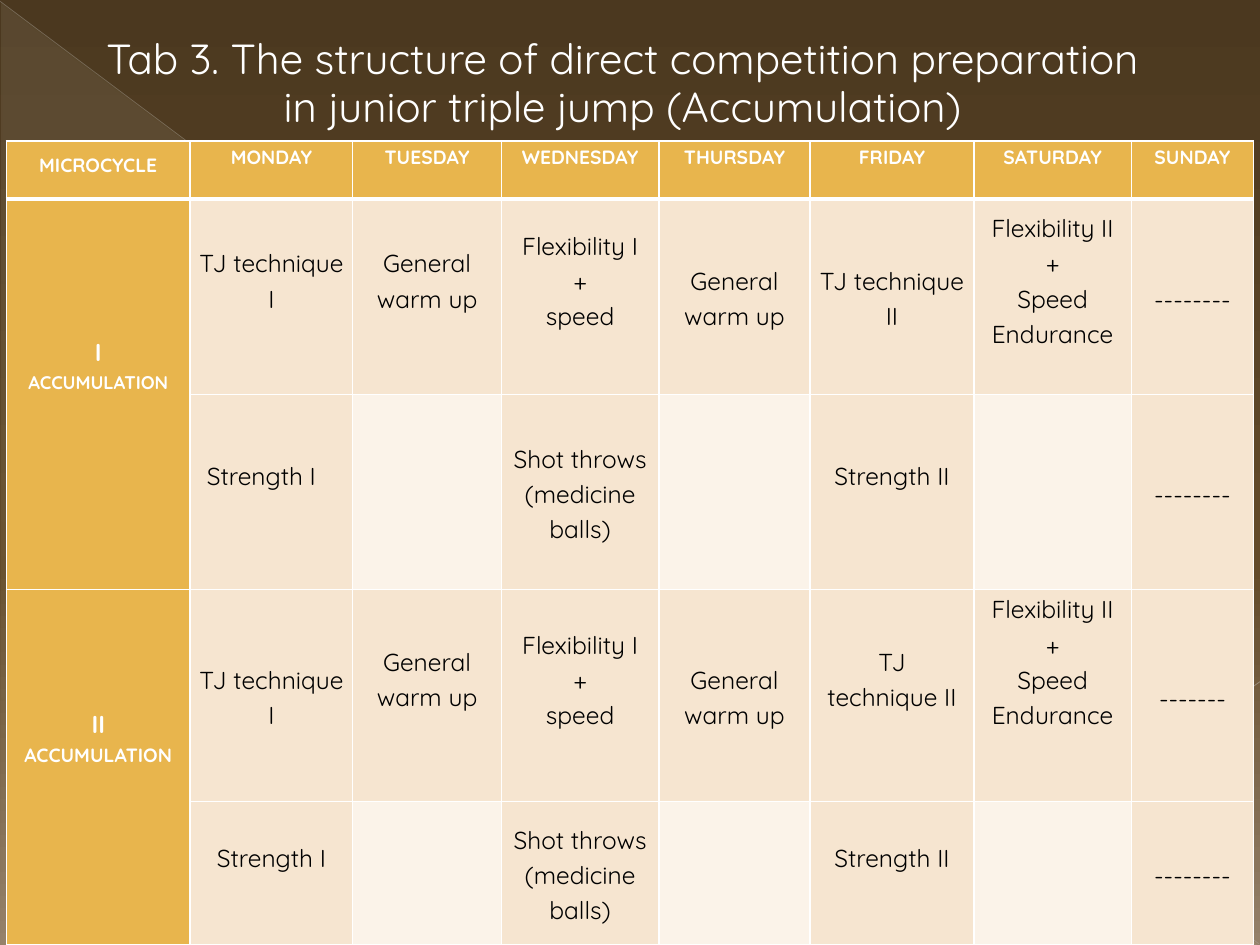
from dataclasses import dataclass

from lxml.etree import SubElement
from pptx import Presentation
from pptx.dml.color import RGBColor
from pptx.enum.shapes import MSO_CONNECTOR, MSO_SHAPE
from pptx.enum.text import MSO_ANCHOR, MSO_AUTO_SIZE, PP_ALIGN
from pptx.oxml import parse_xml
from pptx.oxml.ns import nsdecls, qn
from pptx.util import Inches, Pt


@dataclass(frozen=True)
class Theme:
    font: str = "Quicksand"
    white: str = "FFFFFF"
    black: str = "000000"
    gold: str = "E8B54D"
    cream: str = "F6E5D0"
    pale: str = "FBF3E9"
    backdrop: tuple = ((0, "4B381F", 100), (60, "634B2A", 100), (100, "948069", 100))
    sheen: tuple = ((0, "ECEDD1", 10), (70, "ECEDD1", 8), (100, "ECEDD1", 1))
    title_size: float = 24
    body_size: float = 14
    head_size: float = 11
    line_spacing: float = 1.15


THEME = Theme()
WIDTH, HEIGHT = 10, 7.5
TITLE_BOX = (0, 0.21, 9.88, 0.91)
TABLE_BOX = (0.05, 1.12, 9.88, 6.38)
COLUMNS = (1.46, 1.29, 1.18, 1.25, 1.2, 1.3, 1.25, 0.97)
ROWS = (0.46, 1.55, 1.55, 1.68, 1.14)
SIDE_INSET = 0.07
BODY_LINE = 0.28  # height of one line of body text

TITLE = ("Tab 3. The structure of direct competition preparation"
         "\vin junior triple jump (Accumulation)")
HEADINGS = ("MICROCYCLE", "MONDAY", "TUESDAY", "WEDNESDAY", "THURSDAY",
            "FRIDAY", "SATURDAY", "SUNDAY")
# first row, numeral, size of the word below it
MICROCYCLES = ((1, "I", 10.5), (3, "II", 11))
JUMP = "TJ technique I"
WARM_UP = "General warm up"
SPEED = "Flexibility I\n+\nspeed"
ENDURANCE = "Flexibility II\n+\nSpeed Endurance"
THROWS = "Shot throws (medicine balls)"
REST = "--------"
# each session: text, lines of space kept free below it
SESSIONS = (
    ((JUMP, 1), (WARM_UP, 1), (SPEED, 1), (WARM_UP, 0),
     ("TJ technique II", 0), (ENDURANCE, 1), (REST, 0)),
    (("Strength I", 1), None, (THROWS, 0), None, ("Strength II", 1), None, (REST, 0)),
    ((JUMP, 0), (WARM_UP, 1), (SPEED, 1), (WARM_UP, 0),
     ("TJ\ntechnique II", 1), (ENDURANCE, 2), ("-------", 0)),
    (("Strength I", 1), None, (THROWS, 0), None, ("Strength II", 1), None, (REST, 0)),
)


def color(value):
    return RGBColor.from_string(value)


def gradient(stops, angle):
    """Gradient fill from (position %, colour, opacity %) stops."""
    marks = "".join(
        f'<a:gs pos="{position * 1000}"><a:srgbClr val="{value}">'
        f'<a:alpha val="{opacity * 1000}"/></a:srgbClr></a:gs>'
        for position, value, opacity in stops)
    return parse_xml(f'<a:gradFill {nsdecls("a")} rotWithShape="1"><a:gsLst>{marks}</a:gsLst>'
                     f'<a:lin ang="{angle * 60000}" scaled="0"/></a:gradFill>')


def replace_solid(properties, fill):
    solid = properties.find(qn("a:solidFill"))
    properties.replace(solid, fill)


def add_hairline(slide, start, end, value, width, opacity):
    line = slide.shapes.add_connector(
        MSO_CONNECTOR.STRAIGHT, *(Inches(length) for length in (*start, *end)))
    line.line.color.rgb = color(value)
    line.line.width = Pt(width)
    tint = line.line._ln.find(qn("a:solidFill"))[0]
    SubElement(tint, qn("a:alpha")).set("val", str(opacity * 1000))
    SubElement(line._element.spPr, qn("a:effectLst"))


def add_backdrop(slide, width, height):
    slide.background.fill.solid()
    replace_solid(slide.background._cSld.bg.bgPr, gradient(THEME.backdrop, 90))
    triangle = slide.shapes.add_shape(
        MSO_SHAPE.RIGHT_TRIANGLE, Inches(0.01), Inches(0.02),
        Inches(width - 0.02), Inches(height - 0.02))
    triangle.shadow.inherit = False
    triangle.line.fill.background()
    triangle.fill.solid()
    replace_solid(triangle._element.spPr, gradient(THEME.sheen, 133))
    add_hairline(slide, (0, 0.01), (width - 0.01, height - 0.01), "BEBAB5", 0.39, 35)
    add_hairline(slide, (width, 5.41), (7.07, height - 0.01), "C5C2BE", 0.47, 45)


def format_paragraph(paragraph, size, value, bold=False, spacing=THEME.line_spacing):
    paragraph.alignment = PP_ALIGN.CENTER
    paragraph.line_spacing = spacing
    font = paragraph.font
    font.name, font.size, font.bold = THEME.font, Pt(size), bold
    font.color.rgb = color(value)


def place_title(slide, box):
    title = slide.shapes.title
    title.left, title.top, title.width, title.height = map(Inches, box)
    frame = title.text_frame
    frame.text = TITLE
    frame.word_wrap = True
    frame.auto_size = MSO_AUTO_SIZE.NONE
    frame.vertical_anchor = MSO_ANCHOR.MIDDLE
    format_paragraph(frame.paragraphs[0], THEME.title_size, THEME.white, spacing=0.95)


def format_cell(cell, fill, bottom_width=1):
    cell.fill.solid()
    cell.fill.fore_color.rgb = color(fill)
    cell.margin_left = cell.margin_right = Inches(SIDE_INSET)
    cell.margin_top = cell.margin_bottom = 0
    cell.vertical_anchor = MSO_ANCHOR.MIDDLE
    properties = cell._tc.get_or_add_tcPr()
    widths = {"lnL": 1, "lnR": 1, "lnT": 1, "lnB": bottom_width}
    for index, (side, width) in enumerate(widths.items()):
        properties.insert(index, parse_xml(
            f'<a:{side} {nsdecls("a")} w="{Pt(width)}"><a:solidFill>'
            f'<a:srgbClr val="{THEME.white}"/></a:solidFill></a:{side}>'))


def fill_headings(table):
    for column, heading in enumerate(HEADINGS):
        cell = table.cell(0, column)
        format_cell(cell, THEME.gold, bottom_width=3)
        cell.vertical_anchor = MSO_ANCHOR.TOP
        cell.text = heading
        format_paragraph(cell.text_frame.paragraphs[0], THEME.head_size, THEME.white, True,
                         THEME.line_spacing if column else 1.5)


def fill_microcycles(table):
    for row, numeral, word_size in MICROCYCLES:
        for part in (row, row + 1):
            format_cell(table.cell(part, 0), THEME.gold)
        cell = table.cell(row, 0)
        cell.merge(table.cell(row + 1, 0))
        cell.margin_bottom = Inches(0.5)
        cell.text = f"{numeral}\nACCUMULATION"
        for paragraph, size in zip(cell.text_frame.paragraphs, (THEME.body_size, word_size)):
            format_paragraph(paragraph, size, THEME.white, True)


def fill_sessions(table):
    for row, sessions in enumerate(SESSIONS, start=1):
        for column, session in enumerate(sessions, start=1):
            cell = table.cell(row, column)
            format_cell(cell, THEME.cream if session else THEME.pale)
            if not session:
                continue
            cell.text, free_lines = session
            cell.margin_bottom = Inches(free_lines * BODY_LINE)
            for paragraph in cell.text_frame.paragraphs:
                format_paragraph(paragraph, THEME.body_size, THEME.black)
    table.cell(2, 1).margin_right = Inches(SIDE_INSET + 0.16)


def add_schedule(slide, box):
    table = slide.shapes.add_table(len(ROWS), len(COLUMNS), *map(Inches, box)).table
    table.horz_banding = False
    for column, width in zip(table.columns, COLUMNS):
        column.width = Inches(width)
    for row, height in zip(table.rows, ROWS):
        row.height = Inches(height)
    fill_headings(table)
    fill_microcycles(table)
    fill_sessions(table)


def main():
    presentation = Presentation()
    presentation.slide_width, presentation.slide_height = Inches(WIDTH), Inches(HEIGHT)
    slide = presentation.slides.add_slide(presentation.slide_layouts.get_by_name("Title Only"))
    add_backdrop(slide, WIDTH, HEIGHT)
    add_schedule(slide, TABLE_BOX)
    place_title(slide, TITLE_BOX)
    presentation.save("out.pptx")


if __name__ == "__main__":
    main()
